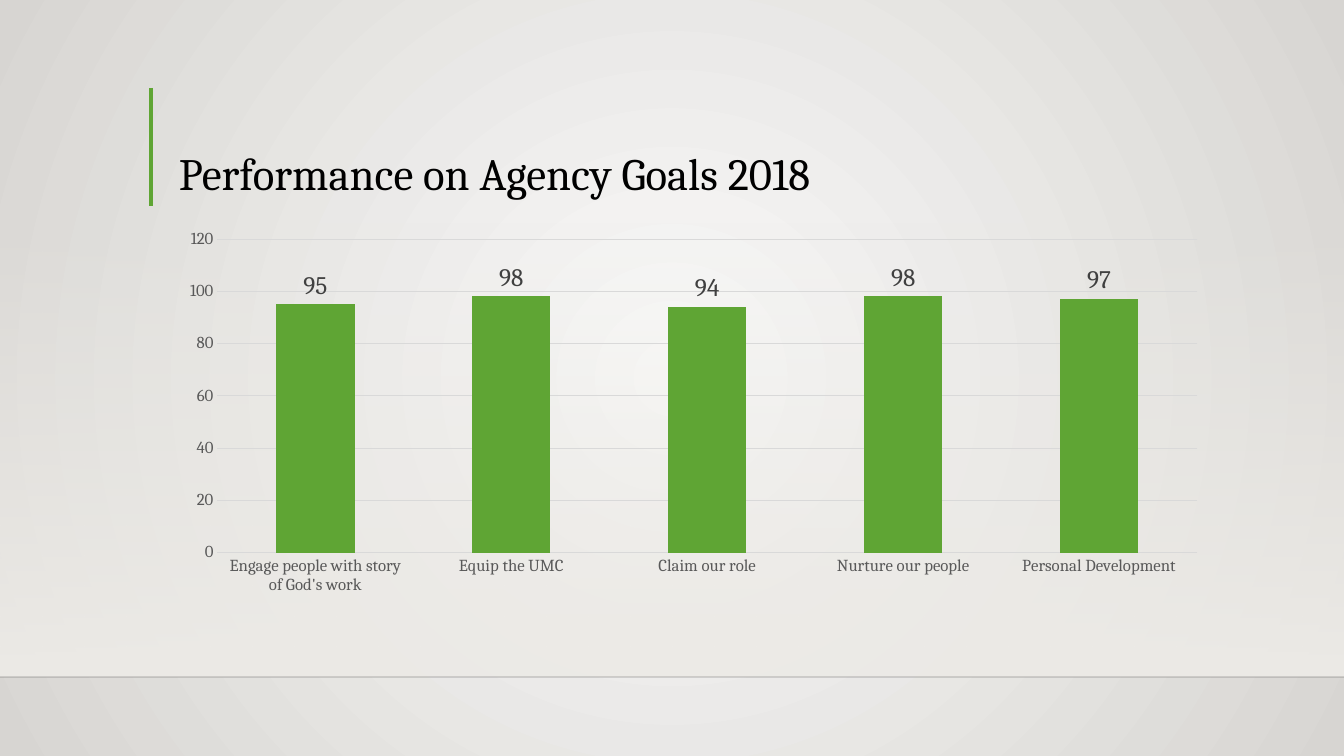
from dataclasses import dataclass

from lxml import etree
from pptx import Presentation
from pptx.chart.data import CategoryChartData
from pptx.dml.color import RGBColor
from pptx.enum.chart import XL_CHART_TYPE as ChartType
from pptx.enum.chart import XL_LABEL_POSITION as LabelPosition
from pptx.enum.chart import XL_TICK_MARK as TickMark
from pptx.enum.shapes import MSO_CONNECTOR as Connector
from pptx.enum.shapes import MSO_SHAPE as Shape
from pptx.enum.text import MSO_ANCHOR as Anchor
from pptx.oxml import parse_xml
from pptx.oxml.ns import nsdecls, qn
from pptx.util import Pt

EMU_PER_PX = 914400 / 100.8
WIDTH, HEIGHT = 1344, 756


@dataclass(frozen=True)
class Theme:
    font: str = "Cambria"
    glow: str = "FAFAF9"
    edge: str = "D7D5D2"
    wall: str = "EDEBE7"
    floor_line: str = "000001"
    accent: str = "5FA534"
    title: str = "000000"
    axis: str = "595959"
    label: str = "404040"
    grid: str = "D9D9D9"
    title_size: int = 32
    label_size: int = 18
    axis_size: int = 12


def px(length):
    return round(length * EMU_PER_PX)


def gradient(stops, direction):
    """Build a gradient fill from (position, colour, opacity) stops in percent."""
    marks = "".join(
        f'<a:gs pos="{pos * 1000}"><a:srgbClr val="{color}">'
        f'<a:alpha val="{opacity * 1000}"/></a:srgbClr></a:gs>'
        for pos, color, opacity in stops)
    return parse_xml(f'<a:gradFill {nsdecls("a")} rotWithShape="1">'
                     f'<a:gsLst>{marks}</a:gsLst>{direction}</a:gradFill>')


class SlideBuilder:
    def __init__(self, slide, theme):
        self.slide = slide
        self.theme = theme

    def style(self, font, size, color):
        font.name = self.theme.font
        font.size = Pt(size)
        font.color.rgb = RGBColor.from_string(color)

    def swap_fill(self, fill, holder, new_fill):
        fill.solid()
        holder.replace(holder.find(qn("a:solidFill")), new_fill)

    def background(self, center, edge):
        fill = self.slide.background.fill
        fill.solid()
        holder = self.slide.element.find(".//" + qn("p:bgPr"))
        focus = ('<a:path path="circle"><a:fillToRect l="50000" t="50000" '
                 'r="50000" b="50000"/></a:path>')
        self.swap_fill(fill, holder, gradient([(0, center, 100), (100, edge, 100)], focus))

    def fading_band(self, left, top, width, height, color):
        band = self.slide.shapes.add_shape(
            Shape.RECTANGLE, px(left), px(top), px(width), px(height))
        band.shadow.inherit = False
        band.line.fill.background()
        downward = '<a:lin ang="5400000" scaled="0"/>'
        self.swap_fill(band.fill, band.element.spPr,
                       gradient([(0, color, 0), (100, color, 100)], downward))

    def line(self, x1, y1, x2, y2, color, weight, opacity=100):
        rule = self.slide.shapes.add_connector(
            Connector.STRAIGHT, px(x1), px(y1), px(x2), px(y2))
        rule.line.width = Pt(weight)
        rule.line.color.rgb = RGBColor.from_string(color)
        properties = rule.element.spPr
        etree.SubElement(properties, qn("a:effectLst"))
        if opacity < 100:
            tint = properties.find(".//" + qn("a:srgbClr"))
            etree.SubElement(tint, qn("a:alpha"), val=str(opacity * 1000))

    def title(self, left, top, width, height, text):
        frame = self.slide.shapes.add_textbox(
            px(left), px(top), px(width), px(height)).text_frame
        frame.word_wrap = True
        frame.vertical_anchor = Anchor.BOTTOM
        frame.text = text
        heading = frame.paragraphs[0]
        heading.line_spacing = 0.9
        self.style(heading.runs[0].font, self.theme.title_size, self.theme.title)

    def column_chart(self, left, top, width, height, series_name, scores):
        theme = self.theme
        data = CategoryChartData()
        data.categories = list(scores)
        data.add_series(series_name, list(scores.values()))
        chart = self.slide.shapes.add_chart(
            ChartType.COLUMN_CLUSTERED, px(left), px(top), px(width), px(height), data).chart
        chart.has_legend = False
        chart.has_title = False
        self.style(chart.font, theme.axis_size, theme.axis)

        # Axes and gridlines
        for axis in (chart.category_axis, chart.value_axis):
            axis.major_tick_mark = axis.minor_tick_mark = TickMark.NONE
            axis.format.line.fill.background()
            self.style(axis.tick_labels.font, theme.axis_size, theme.axis)
        scale = chart.value_axis
        scale.minimum_scale, scale.maximum_scale, scale.major_unit = 0, 120, 20
        grid = scale.major_gridlines.format.line
        grid.width = Pt(0.75)
        grid.color.rgb = RGBColor.from_string(theme.grid)

        # Columns and value labels
        plot = chart.plots[0]
        plot.gap_width = 150
        plot.vary_by_categories = False
        columns = plot.series[0].format.fill
        columns.solid()
        columns.fore_color.rgb = RGBColor.from_string(theme.accent)
        labels = plot.series[0].data_labels
        labels.show_value = True
        labels.position = LabelPosition.OUTSIDE_END
        self.style(labels.font, theme.label_size, theme.label)


def main():
    deck = Presentation()
    deck.slide_width, deck.slide_height = px(WIDTH), px(HEIGHT)
    theme = Theme()
    page = SlideBuilder(deck.slides.add_slide(deck.slide_layouts[6]), theme)

    # Backdrop: wall fading in above the floor line
    floor = 677
    page.background(theme.glow, theme.edge)
    page.fading_band(0, 222, WIDTH, floor - 222, theme.wall)
    page.line(0, floor, WIDTH, floor, theme.floor_line, 1, opacity=20)

    # Title with its accent bar
    content_left, content_width = 169, 1049
    page.line(151, 88, 151, 206, theme.accent, 3)
    page.title(content_left, 89, content_width, 116, "Performance on Agency Goals 2018")

    # Goal scores
    goal_scores = {
        "Engage people with story of God's work": 95,
        "Equip the UMC": 98,
        "Claim our role": 94,
        "Nurture our people": 98,
        "Personal Development": 97,
    }
    page.column_chart(content_left, 222, content_width, 380, "Series 1", goal_scores)

    deck.save("out.pptx")


if __name__ == "__main__":
    main()
